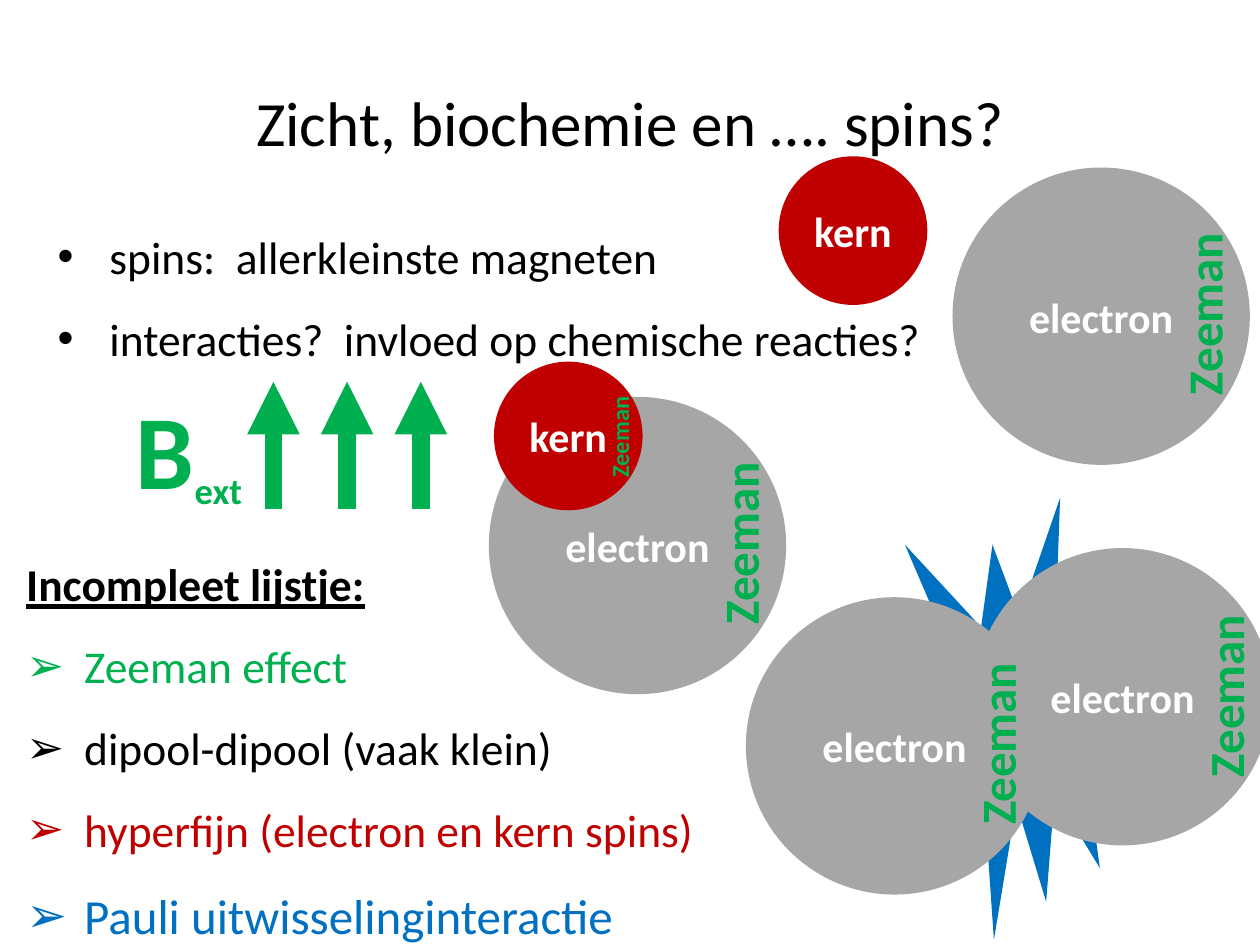
from pptx import Presentation
from pptx.dml.color import RGBColor
from pptx.enum.shapes import MSO_CONNECTOR, MSO_SHAPE
from pptx.enum.text import MSO_ANCHOR, PP_ALIGN
from pptx.oxml.ns import qn
from pptx.util import Inches, Pt
from lxml.etree import SubElement

BLACK = RGBColor(0, 0, 0)
WHITE = RGBColor(255, 255, 255)
GREY = RGBColor(0xA6, 0xA6, 0xA6)
RED = RGBColor(0xC0, 0, 0)
GREEN = RGBColor(0, 0xB0, 0x50)
BLUE = RGBColor(0, 0x70, 0xC0)

ELECTRON = 2.36  # diameters in inches
KERN = 1.18


def style(run, size, color, bold=False):
    font = run.font
    font.name = "Calibri"
    font.size = Pt(size)
    font.color.rgb = color
    font.bold = bold


def add_title(slide, text):
    title = slide.shapes.title
    title.left, title.top = Inches(0), Inches(0)
    title.width, title.height = Inches(10), Inches(1.31)
    frame = title.text_frame
    frame.text = text
    frame.vertical_anchor = MSO_ANCHOR.BOTTOM
    para = frame.paragraphs[0]
    para.alignment = PP_ALIGN.CENTER
    style(para.runs[0], 36, BLACK)


def add_solid(slide, kind, x, y, w, h, color):
    shape = slide.shapes.add_shape(kind, Inches(x), Inches(y), Inches(w), Inches(h))
    shape.shadow.inherit = False
    shape.fill.solid()
    shape.fill.fore_color.rgb = color
    shape.line.fill.background()
    return shape


def add_spin(slide, text, x, y, size, color):
    frame = add_solid(slide, MSO_SHAPE.OVAL, x, y, size, size, color).text_frame
    frame.text = text
    frame.word_wrap = False
    frame.vertical_anchor = MSO_ANCHOR.MIDDLE
    para = frame.paragraphs[0]
    para.alignment = PP_ALIGN.CENTER
    style(para.runs[0], 24, WHITE, True)


def add_text(slide, x, y, w, h):
    box = slide.shapes.add_textbox(Inches(x), Inches(y), Inches(w), Inches(h))
    box.text_frame.word_wrap = True
    return box


def add_zeeman(slide, x, y, h=0.57, size=28):
    box = add_text(slide, x, y, 1.78, h)
    box.rotation = 270
    box.text_frame.text = "Zeeman"
    style(box.text_frame.paragraphs[0].runs[0], size, GREEN, True)


def set_bullet(para, mark, left, hang):
    props = para._p.get_or_add_pPr()
    props.set("marL", str(Inches(left)))
    props.set("indent", str(-Inches(hang)))
    SubElement(props, qn("a:buFont")).set("typeface", "Arial")
    SubElement(props, qn("a:buChar")).set("char", mark)


def add_lines(slide, y, h, lines, mark, left, hang):
    """Each line is (text, size, color, heading)."""
    frame = add_text(slide, 0.11, y, 9.8, h).text_frame
    frame.text = "\n".join(line[0] for line in lines)
    for para, (_, size, color, head) in zip(frame.paragraphs, lines):
        para.line_spacing = 1.5
        run = para.runs[0]
        style(run, size, color, head)
        if head:
            run.font.underline = True
        else:
            set_bullet(para, mark, left, hang)


def add_arrow(slide, x):
    arrow = slide.shapes.add_connector(
        MSO_CONNECTOR.STRAIGHT, Inches(x), Inches(4.04), Inches(x), Inches(3.03))
    arrow.line.color.rgb = GREEN
    arrow.line.width = Pt(10)
    SubElement(arrow.line._get_or_add_ln(), qn("a:tailEnd")).set("type", "triangle")
    SubElement(arrow._element.spPr, qn("a:effectLst"))


def add_field(slide):
    for i in range(3):
        add_arrow(slide, 2.17 + 0.585 * i)
    para = add_text(slide, 0.98, 3, 1.78, 1.11).text_frame.paragraphs[0]
    for text, size in (("B", 60), ("ext", 36)):
        run = para.add_run()
        run.text = text
        style(run, size, GREEN, True)
    run.font._element.set("baseline", "-25000")


def main():
    prs = Presentation()
    prs.slide_width, prs.slide_height = Inches(10), Inches(7.5)
    slide = prs.slides.add_slide(prs.slide_layouts[5])

    # Exchange burst behind the electron pair
    add_solid(slide, MSO_SHAPE.EXPLOSION1, 7.15, 3.95, 1.88, 3.51, BLUE)
    add_spin(slide, "electron", 7.73, 4.35, ELECTRON, GREY)

    # Title and lists
    add_title(slide, "Zicht, biochemie en …. spins?")
    add_lines(slide, 1.55, 1.4, [
        ("spins:  allerkleinste magneten", 26, BLACK, False),
        ("interacties?  invloed op chemische reacties?", 26, BLACK, False),
    ], "•", 0.66, 0.41)
    add_lines(slide, 4.15, 3.45, [
        ("Incompleet lijstje:", 26, BLACK, True),
        ("Zeeman effect", 26, GREEN, False),
        ("dipool-dipool (vaak klein)", 26, BLACK, False),
        ("hyperfijn (electron en kern spins)", 26, RED, False),
        ("Pauli uitwisselinginteractie", 28, BLUE, False),
    ], "➢", 0.46, 0.46)

    # Electron with nucleus, in the external field
    add_spin(slide, "electron", 3.88, 3.15, ELECTRON, GREY)
    add_spin(slide, "kern", 3.92, 2.87, KERN, RED)
    add_field(slide)
    add_zeeman(slide, 4.98, 3.88)

    # Front electron of the pair
    add_spin(slide, "electron", 5.92, 4.74, ELECTRON, GREY)
    add_zeeman(slide, 7.02, 5.47)
    add_zeeman(slide, 8.83, 5.09)

    # Separate electron and nucleus
    add_spin(slide, "electron", 7.56, 1.33, ELECTRON, GREY)
    add_zeeman(slide, 8.66, 2.06)
    add_zeeman(slide, 4.03, 2.83, 0.34, 14)
    add_spin(slide, "kern", 6.18, 1.24, KERN, RED)

    prs.save("out.pptx")


if __name__ == "__main__":
    main()
